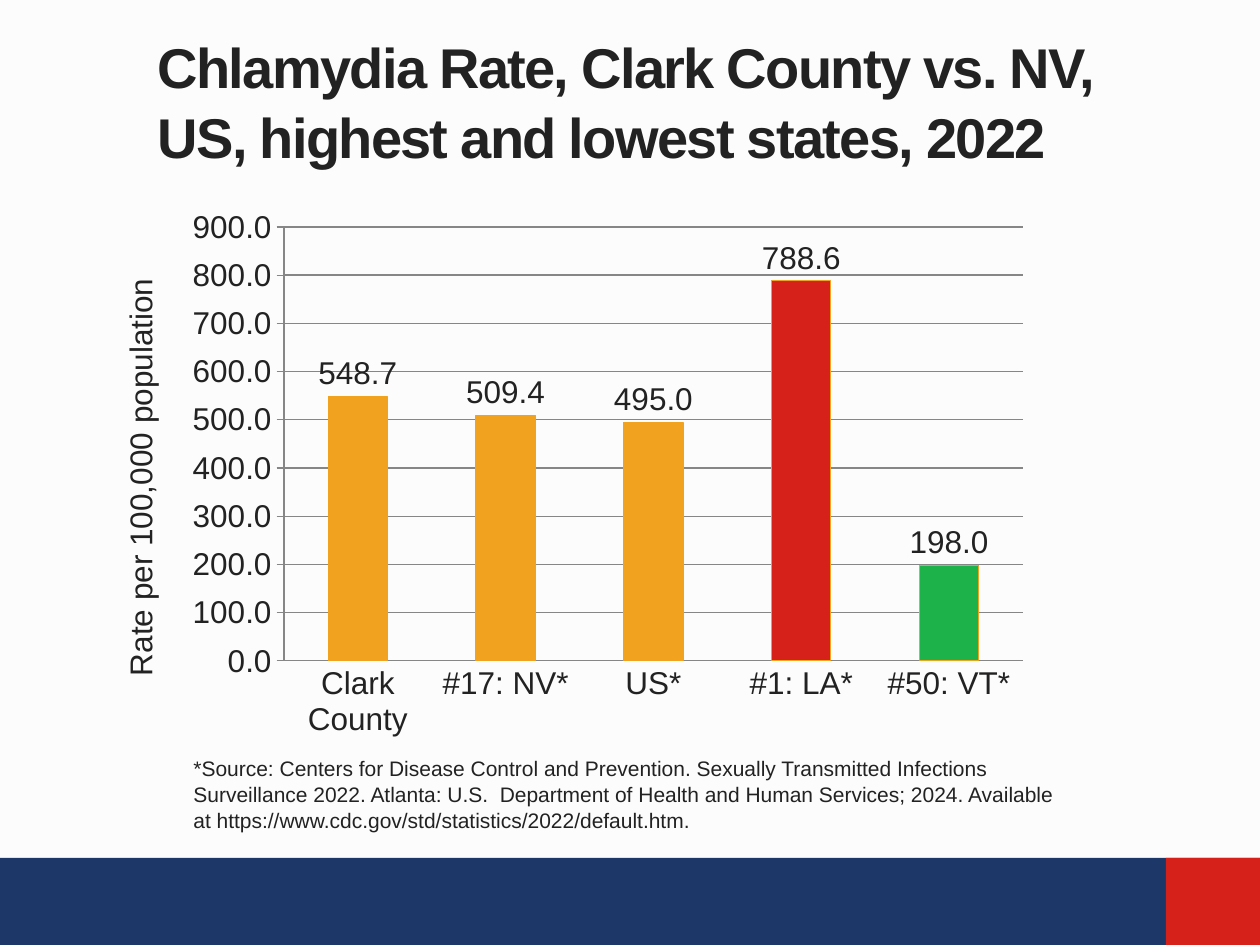
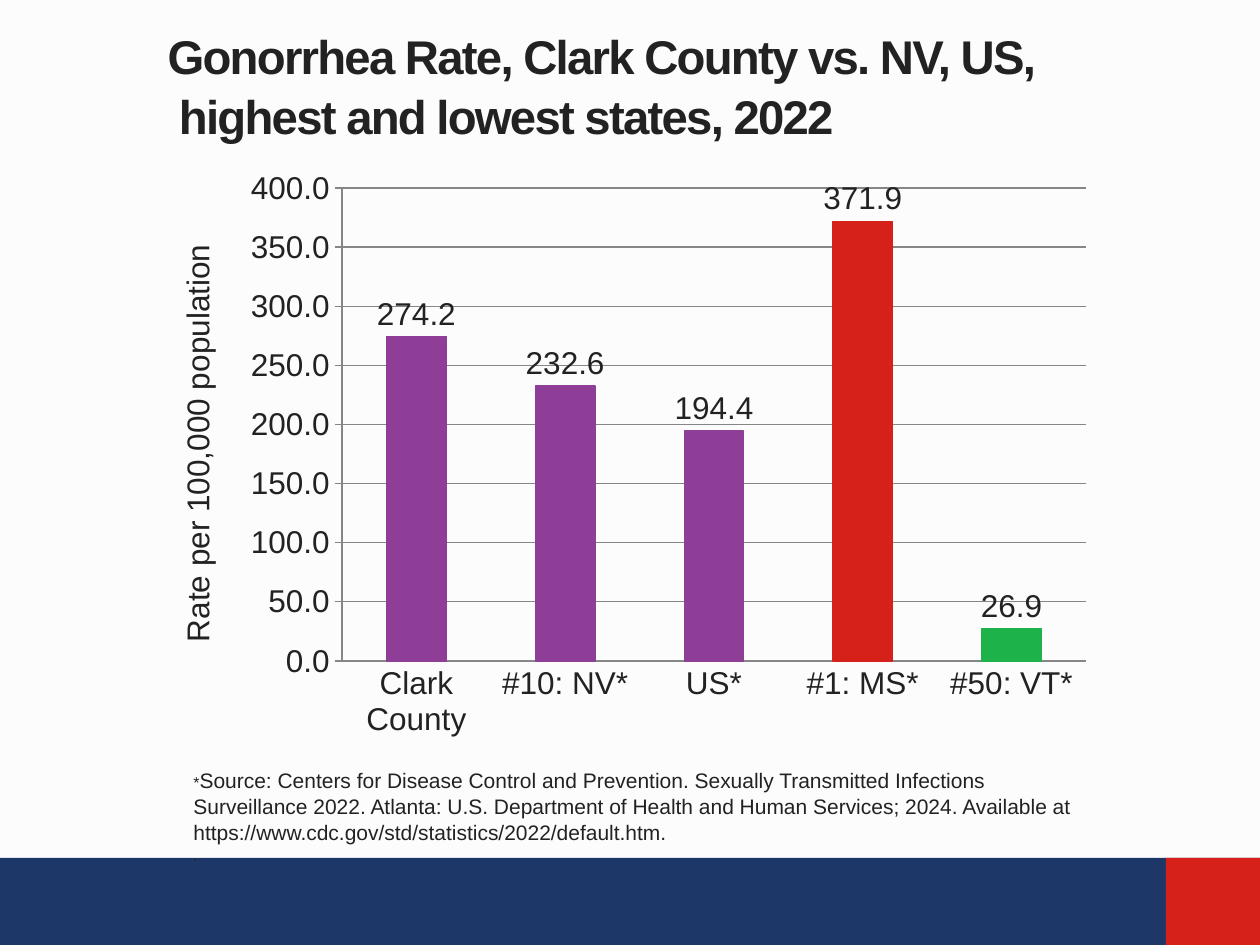
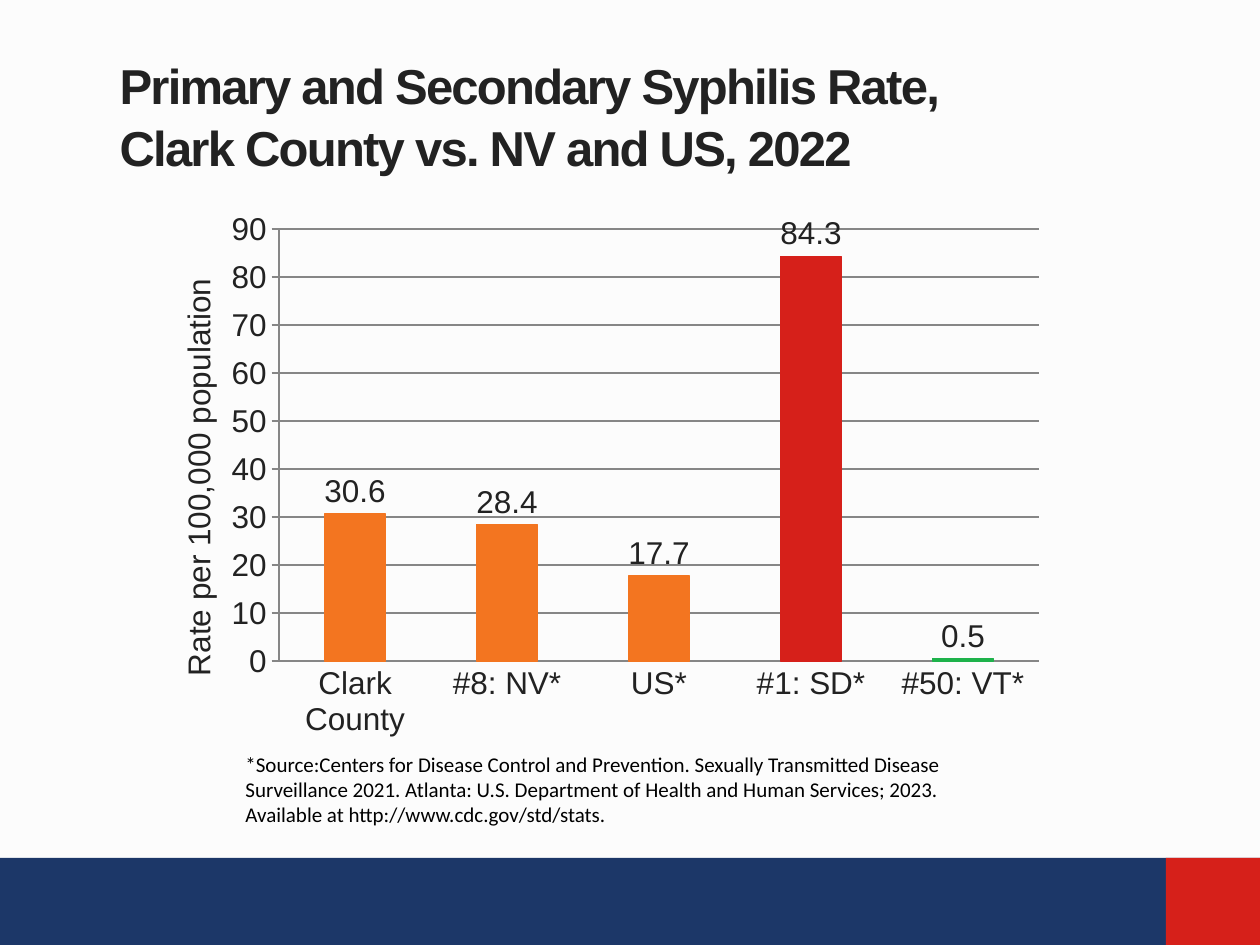
from lxml import etree
from pptx import Presentation
from pptx import util as u
from pptx.chart.data import CategoryChartData
from pptx.dml.color import RGBColor
from pptx.enum import chart as ch, shapes, text
from pptx.oxml.ns import qn

SCALE = 914400 / 126
WIDE, HIGH = 1260, 945
PAPER = RGBColor(0xFC, 0xFC, 0xFC)
NAVY = RGBColor(0x1C, 0x37, 0x68)
RED = RGBColor(0xD6, 0x20, 0x1A)
GREEN = RGBColor(0x1E, 0xB2, 0x4B)
GOLD = RGBColor(0xF1, 0xA2, 0x1F)
PURPLE = RGBColor(0x8F, 0x3E, 0x97)
ORANGE = RGBColor(0xF3, 0x75, 0x20)
INK = RGBColor(0x22, 0x22, 0x22)
BLACK = RGBColor(0, 0, 0)
GREY = RGBColor(0x86, 0x86, 0x86)

SLIDES = [
    dict(
        title=("Chlamydia Rate, Clark County vs. NV, US, highest and "
               "lowest states, 2022", 32, (145, 33, 1028, 133)),
        chart=dict(
            box=(97, 198, 945, 549), plot=(284, 227, 739, 434),
            label=(114, 273), color=GOLD, edges=(GOLD, GOLD), form="0.0",
            names=("#17: NV*", "US*", "#1: LA*", "#50: VT*"),
            rates=(548.7, 509.4, 495, 788.6, 198)),
        note=dict(
            box=(181, 748, 886, 108),
            paras=[[("*Source: Centers for Disease Control and Prevention. "
                     "Sexually Transmitted Infections Surveillance 2022. "
                     "Atlanta: U.S.  Department of Health and Human Services; "
                     "2024. Available at "
                     "https://www.cdc.gov/std/statistics/2022/default.htm.",
                     12)]])),
    dict(
        title=("Gonorrhea Rate, Clark County vs. NV, US,\v highest and "
               "lowest states, 2022", 27, (155, 21, 896, 126)),
        chart=dict(
            box=(155, 159, 950, 590), plot=(342, 188, 744, 473),
            label=(171, 239), color=PURPLE, edges=(RED, GREEN), form="0.0",
            names=("#10: NV*", "US*", "#1: MS*", "#50: VT*"),
            rates=(274.2, 232.6, 194.4, 371.9, 26.9)),
        note=dict(
            box=(181, 760, 924, 127),
            paras=[[("*", 9),
                    ("Source: Centers for Disease Control and Prevention. "
                     "Sexually Transmitted Infections Surveillance 2022. "
                     "Atlanta: U.S. Department of Health and Human Services; "
                     "2024. Available at "
                     "https://www.cdc.gov/std/statistics/2022/default.htm.",
                     12)],
                   [(".", 9)]])),
    dict(
        title=("Primary and Secondary Syphilis Rate, Clark County vs. NV "
               "and US, 2022", 28, (107, 30, 890, 169)),
        chart=dict(
            box=(136, 200, 921, 548), plot=(279, 229, 760, 432),
            label=(172, 273), color=ORANGE, edges=(RED, GREEN), form="0",
            names=("#8: NV*", "US*", "#1: SD*", "#50: VT*"),
            rates=(30.6, 28.4, 17.7, 84.3, 0.5)),
        note=dict(
            box=(233, 745, 764, 108), face="Calibri", color=BLACK, lead=1.0,
            paras=[[("*Source:Centers for Disease Control and Prevention. "
                     "Sexually Transmitted Disease Surveillance 2021. "
                     "Atlanta: U.S. Department of Health and Human Services; "
                     "2023. Available at http://www.cdc.gov/std/stats.",
                     12)]])),
]


def px(*vals):
    return [u.Emu(round(val * SCALE)) for val in vals]


def put(item, **vals):
    for key, val in vals.items():
        setattr(item, key, val)


def ink(font, size, color=INK, face="Arial", bold=False):
    put(font, size=u.Pt(size), name=face, bold=bold)
    font.color.rgb = color


def paint(form, fill, edge):
    form.fill.solid()
    form.fill.fore_color.rgb = fill
    form.line.color.rgb = edge
    form.line.width = u.Pt(0.75)


def add_bands(deck, slide):
    """Draw the footer bands and move them to the master, behind the rest."""
    tree = deck.slide_master.shapes.element
    top = 858
    for spot, (left, color) in enumerate([(0, NAVY), (1166, RED)], 2):
        band = slide.shapes.add_shape(
            shapes.MSO_SHAPE.RECTANGLE,
            *px(left, top, WIDE - left, HIGH - top))
        band.shadow.inherit = False
        band.fill.solid()
        band.fill.fore_color.rgb = color
        band.line.fill.background()
        tree.insert(spot, band.element)


def set_title(slide, words, size, box):
    title = slide.shapes.title
    put(title, **dict(zip(("left", "top", "width", "height"), px(*box))))
    frame = title.text_frame
    frame.text = words
    put(frame, word_wrap=True, auto_size=text.MSO_AUTO_SIZE.NONE,
        vertical_anchor=text.MSO_ANCHOR.MIDDLE)
    para = frame.paragraphs[0]
    put(para, alignment=text.PP_ALIGN.LEFT, line_spacing=1.05)
    for run in para.runs:
        ink(run.font, size, bold=True)
    for props in title.element.iter(qn("a:rPr")):
        props.set("spc", "-100")


def add_note(slide, box, paras, face="Arial", color=INK, lead=1.04):
    frame = slide.shapes.add_textbox(*px(*box)).text_frame
    frame.word_wrap = True
    for num, parts in enumerate(paras):
        para = frame.add_paragraph() if num else frame.paragraphs[0]
        para.line_spacing = lead
        for words, size in parts:
            run = para.add_run()
            run.text = words
            ink(run.font, size, color, face)


def place(part, spot, box, frame):
    """Fix a chart part at a slide position, as shares of the chart frame."""
    old = part.find(qn("c:layout"))
    if old is not None:
        part.remove(old)
    layout = etree.Element(qn("c:layout"))
    manual = etree.SubElement(layout, qn("c:manualLayout"))
    left, top, wide, high = frame
    vals = dict(xMode="edge", yMode="edge",
                x=(box[0] - left) / wide, y=(box[1] - top) / high)
    if len(box) == 4:
        vals = dict(layoutTarget="inner", **vals,
                    w=box[2] / wide, h=box[3] / high)
    for key, val in vals.items():
        etree.SubElement(manual, qn("c:" + key)).set("val", str(val))
    part.insert(spot, layout)


def style_axes(chart, form):
    cat, val = chart.category_axis, chart.value_axis
    cat.major_tick_mark = ch.XL_TICK_MARK.NONE
    put(val, minimum_scale=0, has_major_gridlines=True,
        major_tick_mark=ch.XL_TICK_MARK.OUTSIDE)
    put(val.tick_labels, number_format=form, number_format_is_linked=False)
    for part in (cat, val, val.major_gridlines):
        part.format.line.color.rgb = GREY
        part.format.line.width = u.Pt(0.75)
    frame = val.axis_title.text_frame
    frame.text = "Rate per 100,000 population"
    ink(frame.paragraphs[0].runs[0].font, 18)
    body = val.axis_title.element.find(".//" + qn("a:bodyPr"))
    body.set("rot", "-5400000")
    body.set("vert", "horz")


def add_rates(slide, box, plot, label, color, edges, form, names, rates):
    data = CategoryChartData()
    data.categories = ("Clark County", *names)
    data.add_series("Series 1", rates)
    chart = slide.shapes.add_chart(
        ch.XL_CHART_TYPE.COLUMN_CLUSTERED, *px(*box), data).chart
    put(chart, has_legend=False, has_title=False)
    ink(chart.font, 18)
    style_axes(chart, form)
    put(chart.plots[0], gap_width=150, vary_by_categories=False)
    bars = chart.plots[0].series[0]
    paint(bars.format, color, color)
    for num, fill, edge in zip((3, 4), (RED, GREEN), edges):
        paint(bars.points[num].format, fill, edge)
    put(bars.data_labels, show_value=True, number_format="0.0",
        number_format_is_linked=False,
        position=ch.XL_LABEL_POSITION.OUTSIDE_END)
    place(chart.element.find(".//" + qn("c:plotArea")), 0, plot, box)
    place(chart.value_axis.axis_title.element, 1, label, box)


def main():
    deck = Presentation()
    deck.slide_width, deck.slide_height = px(WIDE, HIGH)
    back = deck.slide_master.background.fill
    back.solid()
    back.fore_color.rgb = PAPER
    for num, item in enumerate(SLIDES):
        slide = deck.slides.add_slide(deck.slide_layouts[5])
        if num == 0:
            add_bands(deck, slide)
        set_title(slide, *item["title"])
        add_rates(slide, **item["chart"])
        add_note(slide, **item["note"])
    deck.save("out.pptx")


if __name__ == "__main__":
    main()
